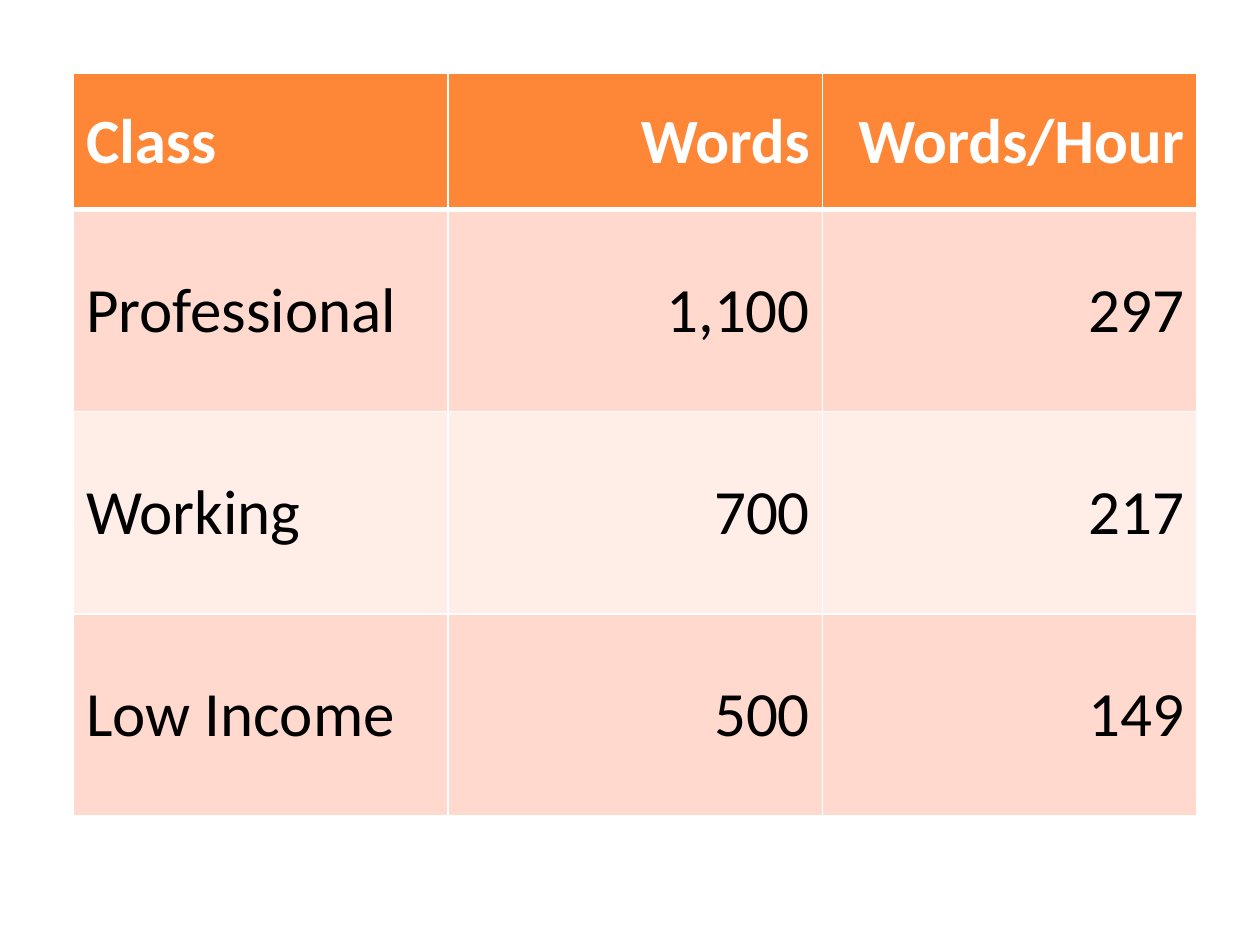
from lxml.etree import SubElement
from pptx import Presentation
from pptx.dml.color import RGBColor
from pptx.enum.text import MSO_ANCHOR, PP_ALIGN
from pptx.oxml.ns import qn
from pptx.util import Pt

WHITE = RGBColor(0xFF, 0xFF, 0xFF)
BLACK = RGBColor(0x00, 0x00, 0x00)
ORANGE = RGBColor(0xFE, 0x86, 0x37)
PEACH = RGBColor(0xFF, 0xD9, 0xCE)
PALE_PEACH = RGBColor(0xFF, 0xED, 0xE8)

WORD_COUNTS = [
    ("Class", "Words", "Words/Hour"),
    ("Professional", "1,100", "297"),
    ("Working", "700", "217"),
    ("Low Income", "500", "149"),
]


def write_text(frame, text, *, font, size, color, bold=False, align=PP_ALIGN.LEFT):
    paragraph = frame.paragraphs[0]
    paragraph.alignment = align
    run = paragraph.add_run()
    run.text = text
    run.font.name = font
    run.font.size = Pt(size)
    run.font.bold = bold
    run.font.color.rgb = color


def set_border(cell, side, width, color):
    """Add one border; call in the order L, R, T, B and before filling the cell."""
    line = SubElement(cell._tc.get_or_add_tcPr(), qn(f"a:ln{side}"), w=str(Pt(width)))
    fill = SubElement(line, qn("a:solidFill"))
    SubElement(fill, qn("a:srgbClr"), val=str(color))


class SlideBuilder:
    font = "Calibri"
    text_size = 36
    thin, thick = 1, 3

    def __init__(self, slide):
        self.slide = slide

    def table(self, rows, left, top, column_width, header_height, row_height):
        columns = len(rows[0])
        height = header_height + row_height * (len(rows) - 1)
        table = self.slide.shapes.add_table(
            len(rows), columns, Pt(left), Pt(top), Pt(column_width * columns), Pt(height)
        ).table
        for column in table.columns:
            column.width = Pt(column_width)
        for r, values in enumerate(rows):
            table.rows[r].height = Pt(row_height if r else header_height)
            for c, value in enumerate(values):
                self.cell(table.cell(r, c), value, r, c)

    def cell(self, cell, value, row, column):
        is_header = row == 0
        widths = {
            "L": self.thin,
            "R": self.thin,
            "T": self.thick if row == 1 else self.thin,
            "B": self.thick if is_header else self.thin,
        }
        for side, width in widths.items():
            set_border(cell, side, width, WHITE)
        cell.fill.solid()
        band = PEACH if row % 2 else PALE_PEACH
        cell.fill.fore_color.rgb = ORANGE if is_header else band
        cell.vertical_anchor = MSO_ANCHOR.MIDDLE
        write_text(
            cell.text_frame, value, font=self.font, size=self.text_size,
            color=WHITE if is_header else BLACK, bold=is_header,
            align=PP_ALIGN.RIGHT if column else PP_ALIGN.LEFT,
        )


def main():
    presentation = Presentation()
    presentation.slide_width = Pt(720)
    presentation.slide_height = Pt(540)
    slide = presentation.slides.add_slide(presentation.slide_layouts[6])
    SlideBuilder(slide).table(
        WORD_COUNTS, left=42, top=42, column_width=214, header_height=77.8, row_height=115.5
    )
    presentation.save("out.pptx")


if __name__ == "__main__":
    main()
